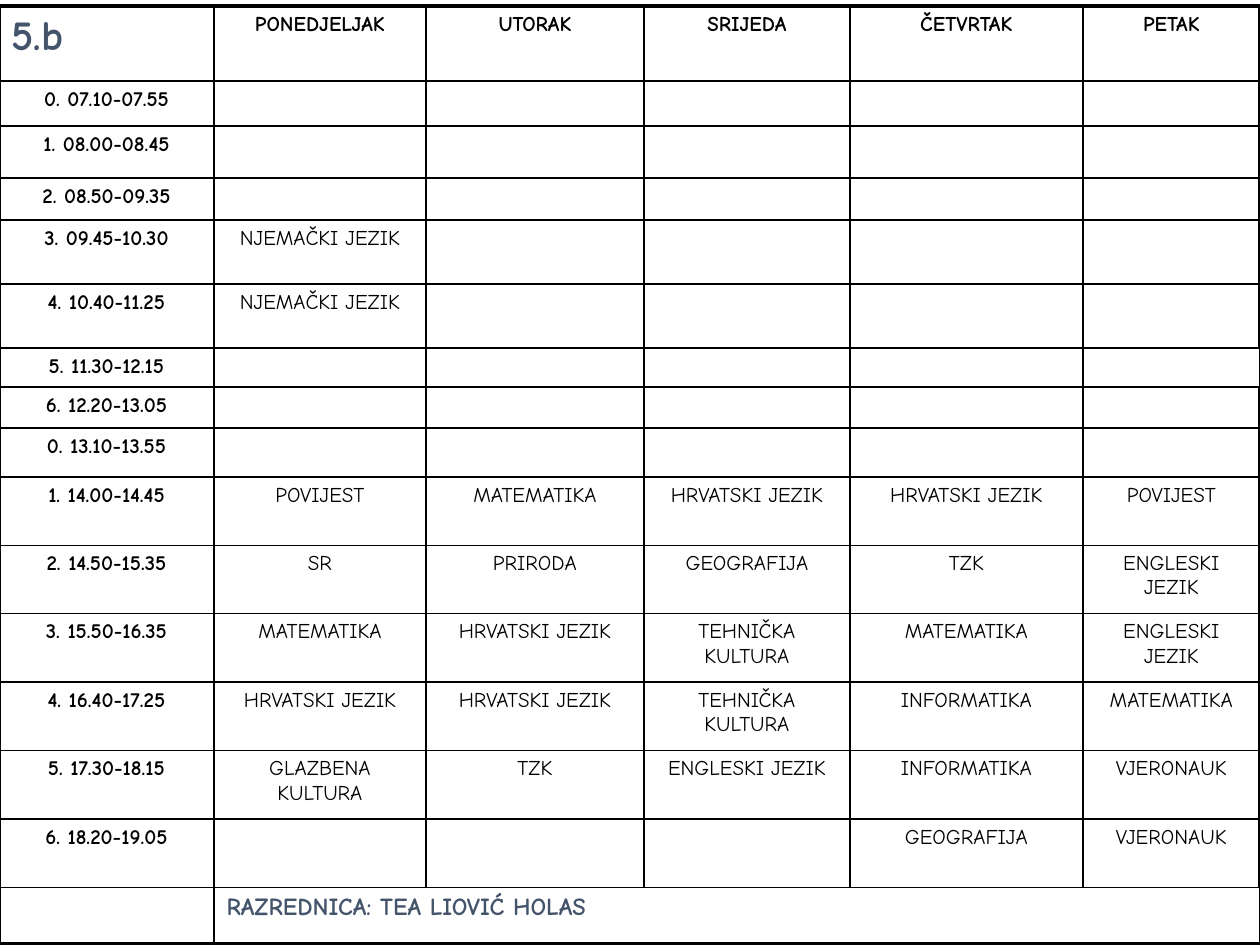
from lxml import etree
from pptx import Presentation
from pptx.dml.color import RGBColor
from pptx.enum.text import PP_ALIGN
from pptx.oxml.ns import qn
from pptx.util import Pt

PX = 914400 // 126
CENTER, LEFT = PP_ALIGN.CENTER, PP_ALIGN.LEFT
FONT = "Comic Neue"
BLACK, SLATE = "000000", "44546A"
THIN, THICK = 1, 2.25

COLUMN_WIDTHS = [215, 212, 218, 206, 233, 177]
ROW_HEIGHTS = [75, 45, 52, 42, 64, 64, 39, 41, 49] + [68.5] * 6 + [56]
DAYS = ["PONEDJELJAK", "UTORAK", "SRIJEDA", "ČETVRTAK", "PETAK"]
LESSONS = [
    ("0. 07.10-07.55",),
    ("1. 08.00-08.45",),
    ("2. 08.50-09.35",),
    ("3. 09.45-10.30", "NJEMAČKI JEZIK"),
    ("4. 10.40-11.25", "NJEMAČKI JEZIK"),
    ("5. 11.30-12.15",),
    ("6. 12.20-13.05",),
    ("0. 13.10-13.55",),
    ("1. 14.00-14.45", "POVIJEST", "MATEMATIKA", "HRVATSKI JEZIK", "HRVATSKI JEZIK", "POVIJEST"),
    ("2. 14.50-15.35", "SR", "PRIRODA", "GEOGRAFIJA", "TZK", "ENGLESKI JEZIK"),
    ("3. 15.50-16.35", "MATEMATIKA", "HRVATSKI JEZIK", "TEHNIČKA KULTURA", "MATEMATIKA", "ENGLESKI JEZIK"),
    ("4. 16.40-17.25", "HRVATSKI JEZIK", "HRVATSKI JEZIK", "TEHNIČKA KULTURA", "INFORMATIKA", "MATEMATIKA"),
    ("5. 17.30-18.15", "GLAZBENA KULTURA", "TZK", "ENGLESKI JEZIK", "INFORMATIKA", "VJERONAUK"),
    ("6. 18.20-19.05", "", "", "", "GEOGRAFIJA", "VJERONAUK"),
]
THIN_EDGE_ROW = 6


def color(code):
    return RGBColor.from_string(code)


class Timetable:
    def __init__(self, page):
        self.page = page

    def grid(self, left, top, widths, heights):
        frame = self.page.shapes.add_table(
            len(heights), len(widths), left * PX, top * PX,
            sum(widths) * PX, int(sum(heights) * PX))
        table = frame.table
        table.first_row = table.horz_banding = False
        for column, width in zip(table.columns, widths):
            column.width = width * PX
        for row, height in zip(table.rows, heights):
            row.height = int(height * PX)
        return table

    def borders(self, cell, **widths):
        properties = cell._tc.get_or_add_tcPr()
        for side in "LRTB":
            line = etree.SubElement(properties, qn(f"a:ln{side}"), w=str(Pt(widths[side])))
            fill = etree.SubElement(line, qn("a:solidFill"))
            etree.SubElement(fill, qn("a:srgbClr"), val=BLACK)
        cell.fill.background()

    def text(self, cell, words, size=12, ink=BLACK, bold=True, align=CENTER):
        para = cell.text_frame.paragraphs[0]
        para.alignment = align
        if not words:
            etree.SubElement(para._p, qn("a:endParaRPr"), sz=str(size * 100))
            return
        span = para.add_run()
        span.text = words
        span.font.name = FONT
        span.font.size = Pt(size)
        span.font.bold = bold
        span.font.color.rgb = color(ink)


def main():
    deck = Presentation()
    deck.slide_width, deck.slide_height = 1260 * PX, 945 * PX
    page = deck.slides.add_slide(deck.slide_layouts[6])
    timetable = Timetable(page)
    table = timetable.grid(-1, 6, COLUMN_WIDTHS, ROW_HEIGHTS)
    last_row, last_column = len(ROW_HEIGHTS) - 1, len(COLUMN_WIDTHS) - 1

    for r in range(last_row + 1):
        for c in range(last_column + 1):
            thick_right = c == last_column and r != THIN_EDGE_ROW
            timetable.borders(
                table.cell(r, c),
                L=THICK if c == 0 else THIN,
                R=THICK if thick_right else THIN,
                T=THICK if r == 0 else THIN,
                B=THICK if r == last_row else THIN)

    timetable.text(table.cell(0, 0), "5.b", 24, SLATE, align=LEFT)
    for c, day in enumerate(DAYS, 1):
        timetable.text(table.cell(0, c), day)
    for r, lesson in enumerate(LESSONS, 1):
        for c in range(last_column + 1):
            words = lesson[c] if c < len(lesson) else ""
            timetable.text(table.cell(r, c), words, bold=c == 0)

    teacher = table.cell(last_row, 1)
    teacher.merge(table.cell(last_row, last_column))
    timetable.text(teacher, "RAZREDNICA: TEA LIOVIĆ HOLAS", 14, SLATE, align=LEFT)
    deck.save("out.pptx")


if __name__ == "__main__":
    main()
